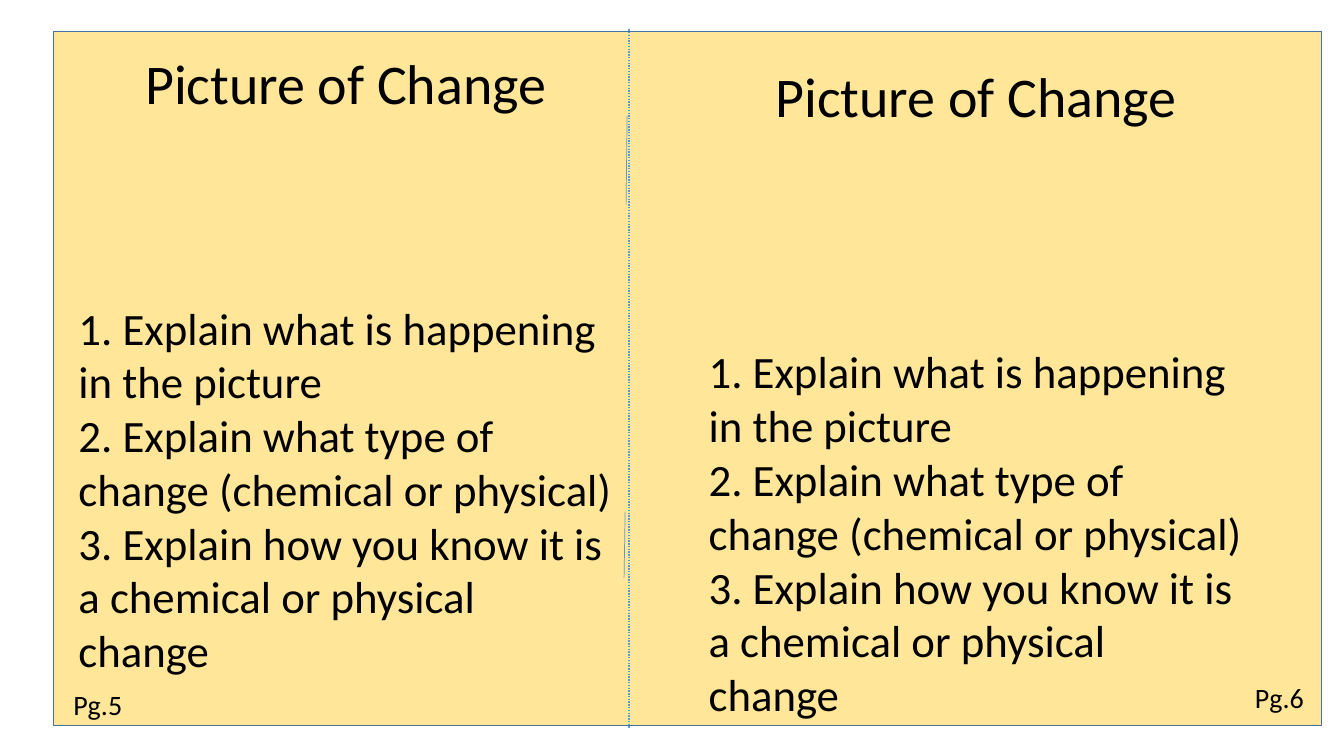
"""Build a two-page spread for describing pictures of change."""
from lxml import etree
from pptx import Presentation
from pptx.dml.color import RGBColor
from pptx.enum import dml, shapes, text
from pptx.oxml.ns import qn
from pptx.util import Inches, Pt

COLORS = {"page": "FFE699", "border": "43739E", "fold": "5B9BD5", "text": "000000"}
TITLE = "Picture of Change"
TASKS = [
    "1. Explain what is happening in the picture",
    "2. Explain what type of change (chemical or physical)",
    "3. Explain how you know it is a chemical or physical change",
]


def rgb(name):
    return RGBColor.from_string(COLORS[name])


def add_text(s, box, lines):
    tf = s.shapes.add_textbox(*map(Inches, box)).text_frame
    tf.word_wrap = True
    for i, (words, size, align, gap) in enumerate(lines):
        p = tf.paragraphs[0] if i == 0 else tf.add_paragraph()
        p.text = words
        p.alignment = align
        p.space_after = Pt(gap)
        p.font.size = Pt(size)
        p.font.name = "Calibri"
        p.font.color.rgb = rgb("text")


prs = Presentation()
prs.slide_width, prs.slide_height = Inches(13.33), Inches(7.5)
s = prs.slides.add_slide(prs.slide_layouts[6])

sp = s.shapes.add_shape(shapes.MSO_SHAPE.RECTANGLE, *map(Inches, (0.53, 0.31, 12.58, 6.89)))
sp.shadow.inherit = False
sp.fill.solid()
sp.fill.fore_color.rgb = rgb("page")
sp.line.color.rgb = rgb("border")
sp.line.width = Pt(1)

for ends, width, dash in [
    ((6.22, 1.15, 6.21, 2.03), 0.5, None),
    ((6.2, 5.08, 6.19, 5.73), 0.5, None),
    ((6.24, 0.29, 6.24, 7.22), 1, dml.MSO_LINE.ROUND_DOT),
]:
    cx = s.shapes.add_connector(shapes.MSO_CONNECTOR.STRAIGHT, *map(Inches, ends))
    cx.line.color.rgb = rgb("fold")
    cx.line.width = Pt(width)
    if dash:
        cx.line.dash_style = dash
    etree.SubElement(cx._element.spPr, qn("a:effectLst"))

center, left = text.PP_ALIGN.CENTER, text.PP_ALIGN.LEFT
for x, y, height, gap in [(0.68, 0.43, 6.36, 132), (6.93, 0.56, 6.66, 154)]:
    lines = [(TITLE, 40, center, gap)] + [(task, 32, left, 0) for task in TASKS]
    add_text(s, (x, y, 5.5, height), lines)

for x, y, label in [(11.91, 6.7, "Pg.6"), (0.19, 6.77, "Pg.5")]:
    add_text(s, (x, y, 1.56, 0.44), [(label, 20, center, 0)])

prs.save("out.pptx")
